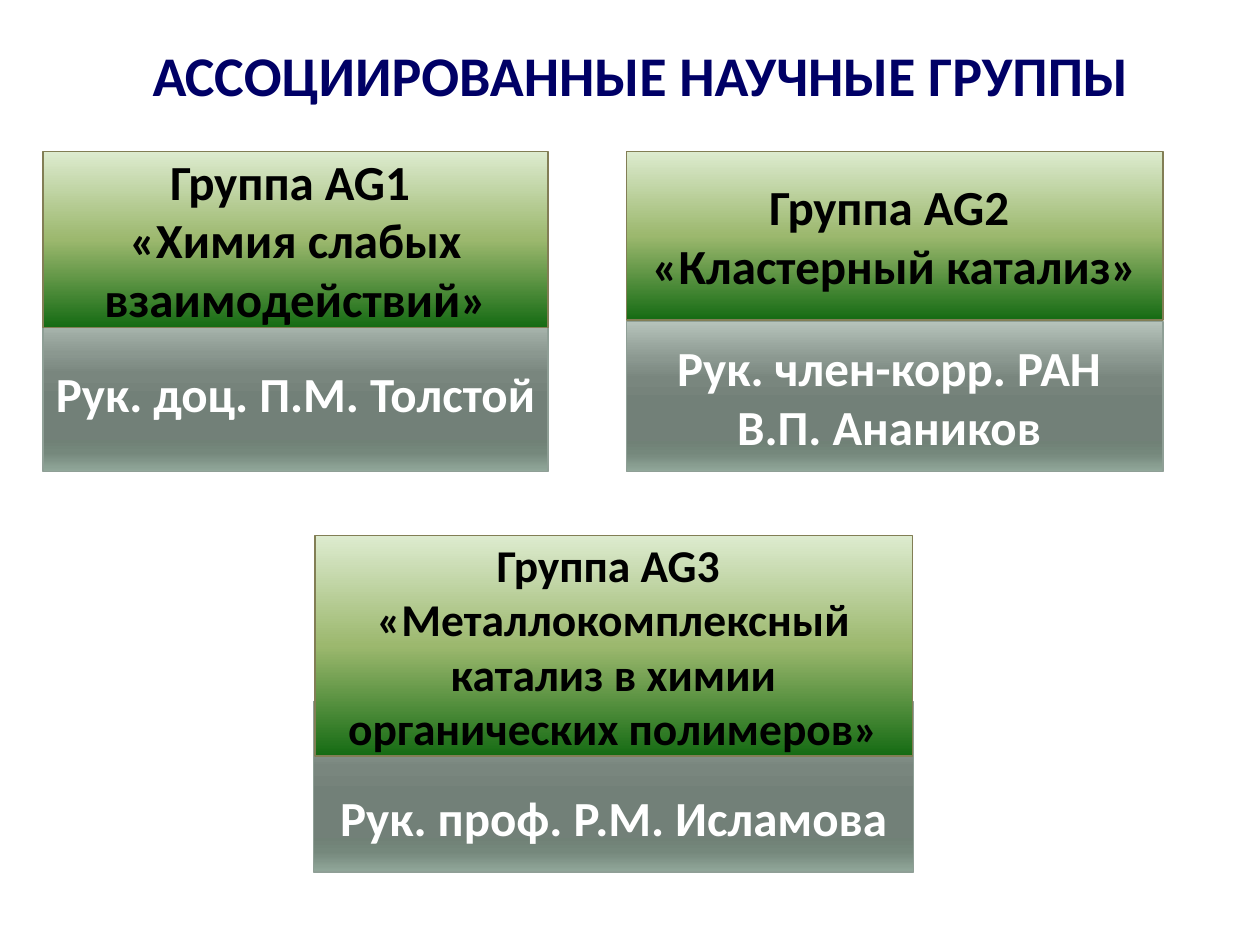
import pptx
import pptx.dml.color
import pptx.enum.shapes
import pptx.enum.text
import pptx.oxml
import pptx.oxml.ns
import pptx.util

Inches = pptx.util.Inches
Pt = pptx.util.Pt

HUES = {
    "title": "000066",
    "group": "000000",
    "head": "FFFFFF",
    "group line": "827E55",
    "head line": "8F9F96",
}
# Gradient stops: percent -> colour
GREEN = {0: "DDEBCF", 50: "9CB86E", 100: "156B13"}
GREY = {0: "B6C3BB", 25: "8B9890", 38: "79867E", 55: "728078",
        80: "708176", 88: "75887C", 100: "91A79A"}


def color(name):
    return pptx.dml.color.RGBColor.from_string(HUES[name])


class Deck:
    """Holds the style and the current slide."""
    font = "Calibri"

    def __init__(self):
        self.file = pptx.Presentation()
        self.file.slide_width = Inches(10)
        self.file.slide_height = Inches(7.5)
        self.slide = self.file.slides.add_slide(self.file.slide_layouts[6])

    def label(self, frame, lines, size, hue):
        frame.word_wrap = True
        frame.text = "\n".join(lines)
        for para in frame.paragraphs:
            para.alignment = pptx.enum.text.PP_ALIGN.CENTER
            para.font.name = self.font
            para.font.size = Pt(size)
            para.font.bold = True
            para.font.color.rgb = color(hue)

    def title(self, text, box):
        shape = self.slide.shapes.add_textbox(*map(Inches, box))
        self.label(shape.text_frame, [text], 32, "title")

    def shade(self, shape, stops):
        shape.fill.gradient()
        shape.fill.gradient_angle = 270  # top to bottom
        items = shape.element.xpath(".//a:gsLst")[0]
        items.clear()
        for spot, value in stops.items():
            items.append(pptx.oxml.parse_xml(
                f'<a:gs {pptx.oxml.ns.nsdecls("a")} pos="{spot * 1000}">'
                f'<a:srgbClr val="{value}"/></a:gs>'))

    def panel(self, box, lines, kind, stops, size=28, drop=0):
        shape = self.slide.shapes.add_shape(
            pptx.enum.shapes.MSO_SHAPE.RECTANGLE, *map(Inches, box))
        shape.shadow.inherit = False
        self.shade(shape, stops)
        shape.line.color.rgb = color(kind + " line")
        shape.line.width = Pt(0.75)
        frame = shape.text_frame
        frame.vertical_anchor = pptx.enum.text.MSO_ANCHOR.MIDDLE
        frame.margin_top = Inches(0.05 + drop)
        self.label(frame, lines, size, kind)


def main():
    deck = Deck()
    deck.title("АССОЦИИРОВАННЫЕ НАУЧНЫЕ ГРУППЫ", (0.17, 0.27, 9.83, 0.62))

    # First group
    deck.panel((0.34, 2.49, 4.01, 1.25), ["Рук. доц. П.М. Толстой"], "head", GREY)
    deck.panel((0.34, 1.2, 4.01, 1.4),
               ["Группа AG1 \v«Химия слабых взаимодействий»"], "group", GREEN)

    # Second group
    deck.panel((4.97, 2.55, 4.26, 1.19),
               ["Рук. член-корр. РАН ", "В.П. Анаников "], "head", GREY)
    deck.panel((4.97, 1.2, 4.26, 1.34),
               ["Группа AG2 \v«Кластерный катализ»"], "group", GREEN)

    # Third group: its leader sits lower, below the overlapping name
    deck.panel((2.49, 5.57, 4.76, 1.35), ["Рук. проф. Р.М. Исламова"],
               "head", GREY, drop=0.47)
    deck.panel((2.5, 4.25, 4.74, 1.75),
               ["Группа AG3 \v«Металлокомплексный катализ в химии "
                "органических полимеров»"], "group", GREEN, size=26)

    deck.file.save("out.pptx")


if __name__ == "__main__":
    main()
